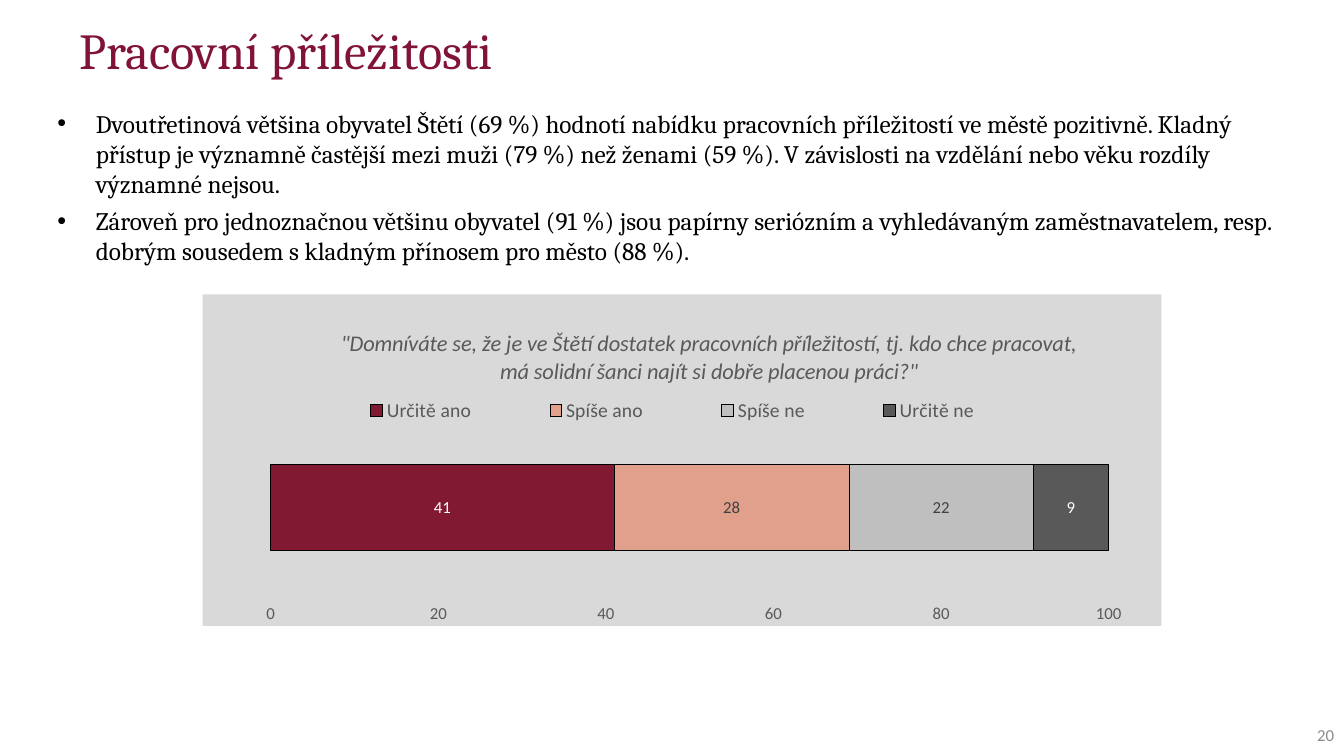
from lxml.etree import SubElement
from pptx import Presentation
from pptx.chart.data import CategoryChartData
from pptx.dml.color import RGBColor
from pptx.enum.chart import XL_CHART_TYPE, XL_LABEL_POSITION, XL_LEGEND_POSITION, XL_TICK_MARK
from pptx.enum.text import MSO_ANCHOR, PP_ALIGN
from pptx.oxml import parse_xml
from pptx.oxml.ns import nsdecls, qn
from pptx.util import Inches, Pt

WINE = RGBColor(0x81, 0x13, 0x39)
DEEP_WINE = RGBColor(0x82, 0x19, 0x32)
SALMON = RGBColor(0xE1, 0xA0, 0x8C)
SILVER = RGBColor(0xBF, 0xBF, 0xBF)
GRAPHITE = RGBColor(0x59, 0x59, 0x59)
CHARCOAL = RGBColor(0x40, 0x40, 0x40)
PANEL = RGBColor(0xD9, 0xD9, 0xD9)
PAGE_GRAY = RGBColor(0x8C, 0x8C, 0x8C)
BLACK = RGBColor(0, 0, 0)
WHITE = RGBColor(0xFF, 0xFF, 0xFF)

FINDINGS = [
    "Dvoutřetinová většina obyvatel Štětí (69 %) hodnotí nabídku pracovních příležitostí ve městě "
    "pozitivně. Kladný přístup je významně častější mezi muži (79 %) než ženami (59 %). "
    "V závislosti na vzdělání nebo věku rozdíly významné nejsou.",
    "Zároveň pro jednoznačnou většinu obyvatel (91 %) jsou papírny seriózním a vyhledávaným "
    "zaměstnavatelem, resp. dobrým sousedem s kladným přínosem pro město (88 %).",
]
QUESTION = ('"Domníváte se, že je ve Štětí dostatek pracovních příležitostí, tj. kdo chce pracovat, '
            'má solidní šanci najít si dobře placenou práci?"')
ANSWERS = [
    ("Určitě ano", 41, DEEP_WINE, WHITE),
    ("Spíše ano", 28, SALMON, CHARCOAL),
    ("Spíše ne", 22, SILVER, CHARCOAL),
    ("Určitě ne", 9, GRAPHITE, WHITE),
]


def style_font(font, name, size, color):
    """Set the typeface, point size and colour of a font."""
    font.name = name
    font.size = Pt(size)
    font.color.rgb = color


def add_frame(page, box, inset=0):
    """Add a wrapping text box and return its text frame."""
    frame = page.shapes.add_textbox(*map(Inches, box)).text_frame
    frame.word_wrap = True
    frame.margin_left = frame.margin_right = Inches(inset)
    frame.margin_top = frame.margin_bottom = Inches(inset / 2)
    return frame


def add_span(para, text, name, size, color):
    """Append one styled run to a paragraph."""
    span = para.add_run()
    span.text = text
    style_font(span.font, name, size, color)


def add_heading(page, box):
    """Place the slide heading."""
    para = add_frame(page, box).paragraphs[0]
    para.line_spacing = 0.9
    add_span(para, "Pracovní příležitosti", "Cambria", 36, WINE)


def add_findings(page, box):
    """Place the bulleted findings."""
    frame = add_frame(page, box)
    for index, finding in enumerate(FINDINGS):
        para = frame.add_paragraph() if index else frame.paragraphs[0]
        properties = para._p.get_or_add_pPr()
        properties.set("marL", str(Inches(0.67)))
        properties.set("indent", str(Inches(-0.38)))
        SubElement(properties, qn("a:buFont")).set("typeface", "Arial")
        SubElement(properties, qn("a:buChar")).set("char", "•")
        if index:
            para.space_before = Pt(5)
        add_span(para, finding, "Cambria", 18, BLACK)


def add_page_number(page, box):
    """Place the page number."""
    frame = add_frame(page, box, 0.1)
    frame.vertical_anchor = MSO_ANCHOR.MIDDLE
    para = frame.paragraphs[0]
    para.alignment = PP_ALIGN.RIGHT
    add_span(para, "20", "Calibri", 12, PAGE_GRAY)


def place_part(part, inner=False, **fractions):
    """Position a chart part by fractions of the chart area."""
    for old in part.findall(qn("c:layout")):
        part.remove(old)
    target = '<c:layoutTarget val="inner"/>' if inner else ""
    modes = "".join(f'<c:{side}Mode val="edge"/>' for side in "xy")
    sizes = "".join(f'<c:{key} val="{value}"/>' for key, value in fractions.items())
    layout = parse_xml(f'<c:layout {nsdecls("c")}><c:manualLayout>{target}{modes}{sizes}'
                       "</c:manualLayout></c:layout>")
    before = [child for child in part
              if child.tag in (qn("c:tx"), qn("c:legendPos"), qn("c:legendEntry"))]
    part.insert(len(before), layout)


def style_axes(chart):
    """Hide the category axis and style the percentage axis."""
    chart.category_axis.visible = False
    axis = chart.value_axis
    axis.minimum_scale, axis.maximum_scale, axis.major_unit = 0, 100, 20
    axis.major_tick_mark = XL_TICK_MARK.OUTSIDE
    axis.format.line.fill.background()
    axis.major_gridlines.format.line.color.rgb = PANEL
    axis.major_gridlines.format.line.width = Pt(0.75)
    style_font(axis.tick_labels.font, "Calibri", 12, GRAPHITE)


def style_answers(plot):
    """Colour and label each answer segment."""
    plot.gap_width = plot.overlap = 100
    plot.vary_by_categories = False
    for series, (_, _, fill, label) in zip(plot.series, ANSWERS):
        series.format.fill.solid()
        series.format.fill.fore_color.rgb = fill
        series.format.line.color.rgb = BLACK
        series.format.line.width = Pt(0.5)
        labels = series.data_labels
        labels.show_value = True
        labels.position = XL_LABEL_POSITION.CENTER
        style_font(labels.font, "Calibri", 12, label)


def add_survey_chart(page, box):
    """Place the stacked bar with the survey answers."""
    data = CategoryChartData()
    data.categories = ["1"]
    for name, value, _, _ in ANSWERS:
        data.add_series(name, [value])
    chart = page.shapes.add_chart(XL_CHART_TYPE.BAR_STACKED, *map(Inches, box), data).chart
    style_font(chart.font, "Calibri", 10, BLACK)
    chart.has_title = True
    add_span(chart.chart_title.text_frame.paragraphs[0], QUESTION, "Calibri", 16, GRAPHITE)
    font = chart.chart_title.text_frame.paragraphs[0].runs[0].font
    font.italic, font.bold = True, False
    chart.chart_title.include_in_layout = False
    chart.has_legend = True
    chart.legend.position = XL_LEGEND_POSITION.BOTTOM
    chart.legend.include_in_layout = False
    style_font(chart.legend.font, "Calibri", 14, GRAPHITE)
    style_axes(chart)
    style_answers(chart.plots[0])
    space = chart._chartSpace
    place_part(space.chart.find(qn("c:title")), x=0.14, y=0.09)
    place_part(space.chart.find(qn("c:legend")), x=0.1, y=0.3, w=0.78, h=0.1)
    place_part(space.chart.plotArea, inner=True, x=0.071, y=0.384, w=0.874, h=0.519)
    space.chart.addnext(parse_xml(
        f'<c:spPr {nsdecls("c", "a")}><a:solidFill><a:srgbClr val="{PANEL}"/></a:solidFill>'
        "<a:ln><a:noFill/></a:ln></c:spPr>"))


def main():
    """Build and save the slide."""
    deck = Presentation()
    deck.slide_width, deck.slide_height = Inches(13.33), Inches(7.5)
    page = deck.slides.add_slide(deck.slide_layouts[6])
    add_heading(page, (0.79, 0.26, 11.77, 1.07))
    add_findings(page, (0.28, 1.07, 12.72, 2.07))
    add_page_number(page, (12.75, 7.09, 0.58, 0.4))
    add_survey_chart(page, (2.01, 2.92, 9.51, 3.29))
    deck.save("out.pptx")


if __name__ == "__main__":
    main()
